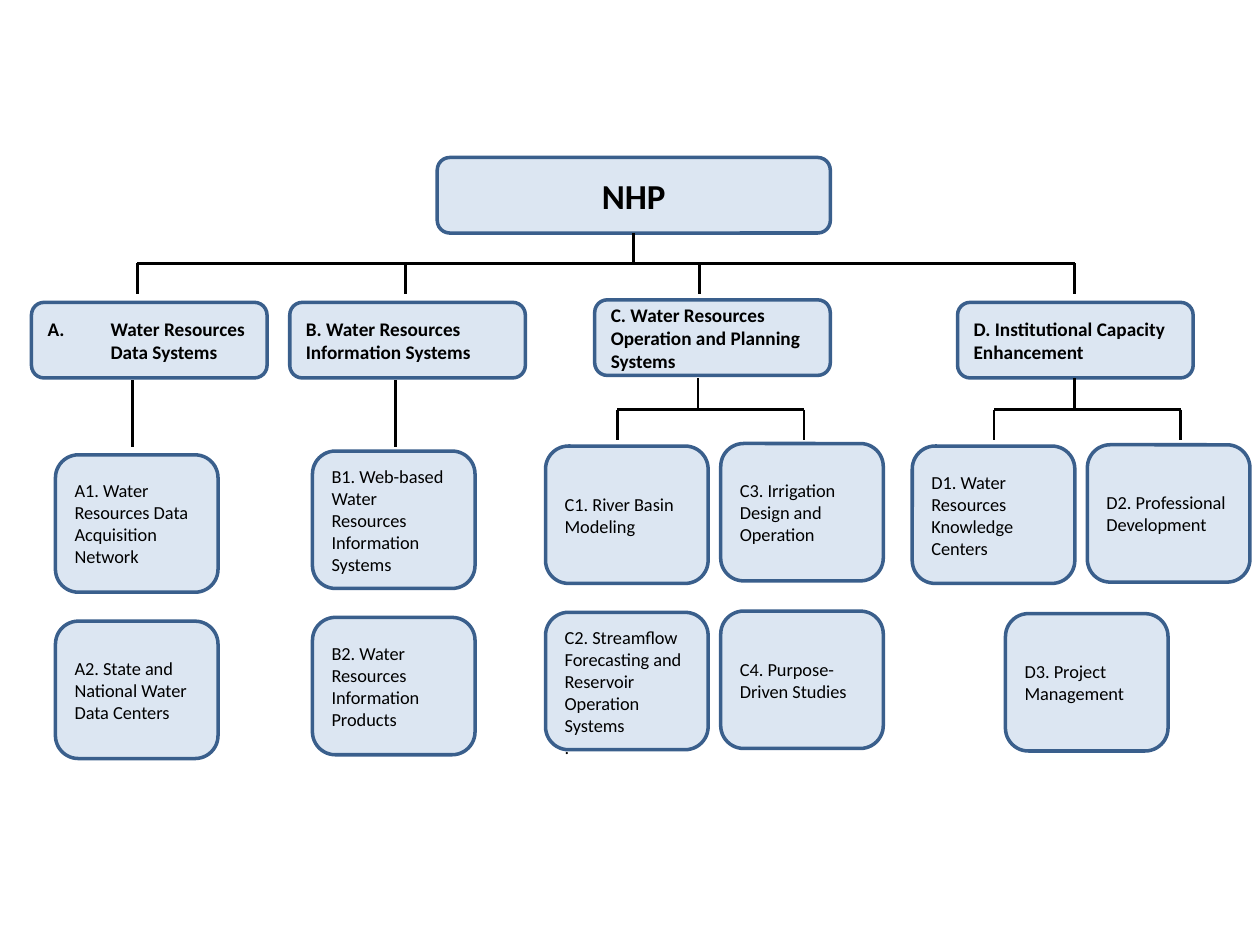
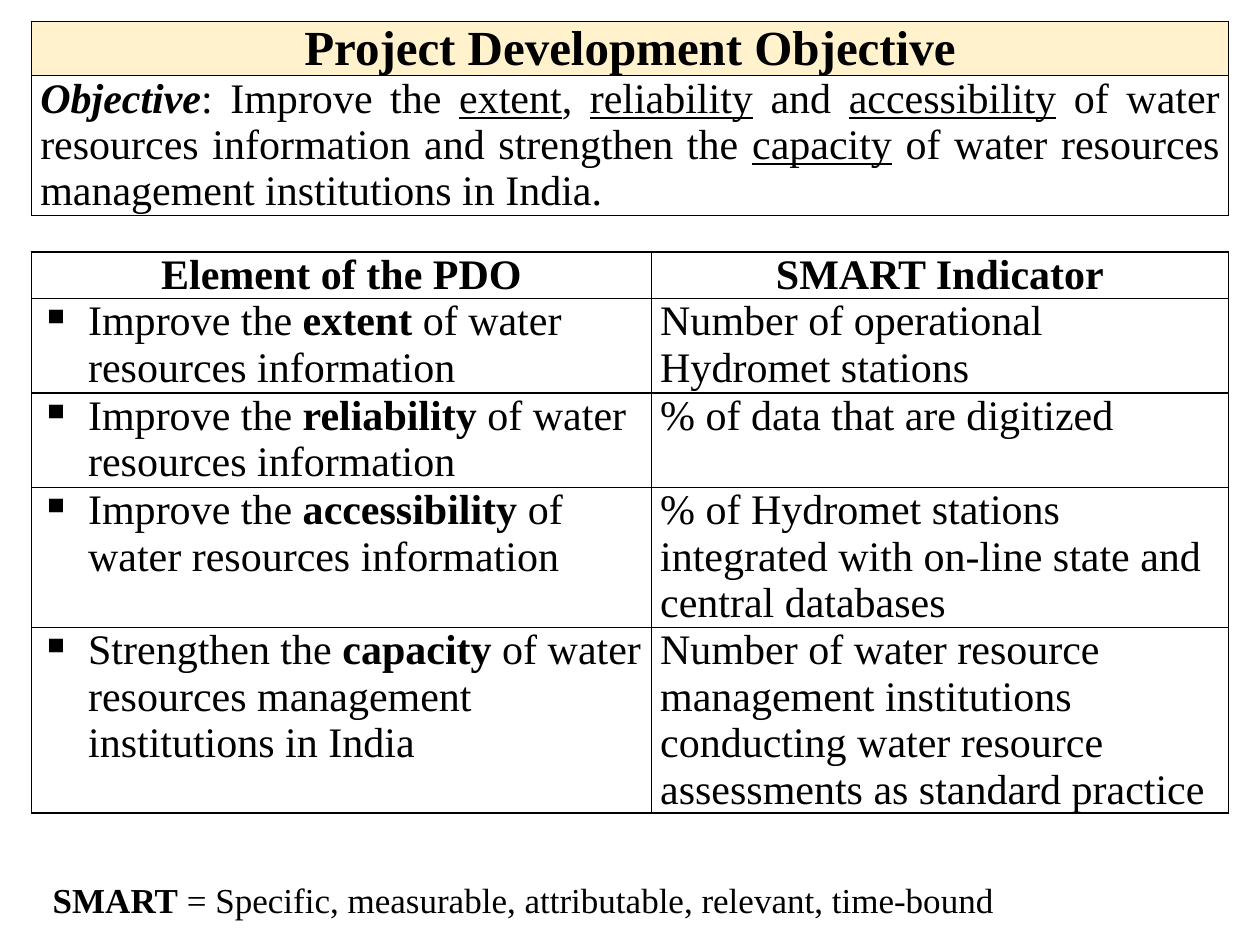
from lxml import etree
from pptx import Presentation
from pptx import util as u
from pptx.dml.color import RGBColor
from pptx.enum import shapes, text
from pptx.oxml import ns

COLORS = {"box": "DCE6F2", "edge": "3A5F8C", "ink": "000000", "band": "FFF2CC"}
SANS, SERIF = "Calibri", "Times New Roman"
AL = text.PP_ALIGN
STYLES = {"b": "bold", "i": "italic", "u": "underline"}

HEAD_W, BOX_H = 1.87, 0.6
LEAF_W, LEAF_H = 1.29, 1.09
TRUNK_Y, LINK = 2.09, 0.24

# Each branch: header left, top and text; offset of the stem; fork offsets;
# leaves as (x offset, y offset, paragraphs), all from the header's corner
BRANCHES = [
    (0.25, 2.4, "Water Resources Data Systems", 0.8, [], [
        (0.19, 1.21, ["A1. Water Resources Data Acquisition Network"]),
        (0.19, 2.53, ["A2. State and National Water Data Centers"])]),
    (2.3, 2.4, "B. Water Resources Information Systems", 0.84, [], [
        (0.18, 1.18, ["B1. Web-based Water Resources Information Systems"]),
        (0.18, 2.5, ["B2. Water Resources Information Products"])]),
    (4.72, 2.38, "C. Water Resources Operation and Planning Systems", 0.82, [0.18, 1.66], [
        (-0.39, 1.16, ["C1. River Basin Modeling"]),
        (-0.39, 2.48, ["C2. Streamflow Forecasting and Reservoir Operation Systems", "."]),
        (1.0, 1.14, ["C3. Irrigation Design and Operation"]),
        (1.0, 2.47, ["C4. Purpose-Driven Studies"])]),
    (7.6, 2.4, "D. Institutional Capacity Enhancement", 0.93, [0.29, 1.77], [
        (-0.36, 1.14, ["D1. Water Resources Knowledge Centers"]),
        (1.03, 1.13, ["D2. Professional Development"]),
        (0.38, 2.47, ["D3. Project Management"])]),
]
DROPS = [1.09, 3.22, 5.55, 8.53]

OBJECTIVE = [
    ("Objective", "bi"), (": Improve the ", ""), ("extent", "u"), (", ", ""),
    ("reliability", "u"), (" and ", ""), ("accessibility", "u"),
    (" of water resources information and strengthen the ", ""), ("capacity", "u"),
    (" of water resources management institutions in India.", "")]

# Verb, key word, rest of the element, indicator
INDICATORS = [
    ("Improve the ", "extent", " of water resources information",
     "Number of operational Hydromet stations"),
    ("Improve the ", "reliability", " of water resources information",
     "% of data that are digitized"),
    ("Improve the ", "accessibility", " of water resources information",
     "% of Hydromet stations integrated with on-line state and central databases"),
    ("Strengthen the ", "capacity", " of water resources management institutions in India",
     "Number of water resource management institutions conducting water resource "
     "assessments as standard practice"),
]


def rgb(name):
    return RGBColor.from_string(COLORS[name])


def set_all(obj, values):
    for name, value in values.items():
        setattr(obj, name, value)


def write(p, runs, font, size, align=AL.LEFT):
    """Fill a paragraph with (text, style letters) runs."""
    p.alignment = align
    for words, style in runs:
        r = p.add_run()
        r.text = words
        set_all(r.font, {"name": font, "size": u.Pt(size)})
        set_all(r.font, {name: key in style for key, name in STYLES.items()})
        r.font.color.rgb = rgb("ink")


def bullet(p, indent, tag, **attrs):
    pPr = p._p.get_or_add_pPr()
    pPr.set("marL", str(u.Inches(indent)))
    pPr.set("indent", str(-u.Inches(indent)))
    etree.SubElement(pPr, ns.qn(tag), attrs)


# Organisation chart
def box(s, x, y, w, h, paras, size, style="", align=AL.LEFT):
    sp = s.shapes.add_shape(shapes.MSO_SHAPE.ROUNDED_RECTANGLE,
                            *map(u.Inches, (x, y, w, h)))
    sp.shadow.inherit = False
    sp.fill.solid()
    sp.fill.fore_color.rgb = rgb("box")
    sp.line.color.rgb = rgb("edge")
    sp.line.width = u.Pt(2)
    tf = sp.text_frame
    set_all(tf, {"word_wrap": True, "vertical_anchor": text.MSO_ANCHOR.MIDDLE})
    for i, words in enumerate(paras):
        p = tf.add_paragraph() if i else tf.paragraphs[0]
        write(p, [(words, style)], SANS, size, align)
    return tf


def line(s, x1, y1, x2, y2):
    c = s.shapes.add_connector(shapes.MSO_CONNECTOR.STRAIGHT,
                               *map(u.Inches, (x1, y1, x2, y2)))
    c.line.color.rgb = rgb("ink")
    c.line.width = u.Pt(1.5)
    etree.SubElement(c._element.spPr, ns.qn("a:effectLst"))


def fork(s, x, top, bar_y, drops):
    """Stem down to a bar, and one drop from the bar to each child."""
    line(s, x, top, x, bar_y)
    line(s, drops[0], bar_y, drops[-1], bar_y)
    for drop in drops:
        line(s, drop, bar_y, drop, bar_y + LINK)


def branch(s, x, y, title, stem, tines, leaves):
    tf = box(s, x, y, HEAD_W, BOX_H, [title], 11, "b")
    for dx, dy, paras in leaves:
        leaf = box(s, x + dx, y + dy, LEAF_W, LEAF_H, paras, 10.5)
        if len(paras) > 1:
            leaf.margin_top = u.Inches(0.22)
    if tines:
        fork(s, x + stem, 3, 3.25, [x + t for t in tines])
    else:
        line(s, x + stem, 3.02, x + stem, 3.55)
    return tf


def org_slide(prs):
    s = prs.slides.add_slide(prs.slide_layouts[6])
    box(s, 3.47, 1.25, 3.12, BOX_H, ["NHP"], 20, "b", AL.CENTER)
    heads = [branch(s, *b) for b in BRANCHES]
    bullet(heads[0].paragraphs[0], 0.5, "a:buAutoNum", type="alphaUcPeriod")
    fork(s, 5.03, 1.85, TRUNK_Y, DROPS)


# Objective tables
def grid(s, x, y, cols, rows):
    """Empty bordered table with the given column widths and row heights."""
    frame = s.shapes.add_table(len(rows), len(cols), *map(
        u.Inches, (x, y, sum(cols), sum(rows))))
    t = frame.table
    set_all(t, {"first_row": False, "horz_banding": False})
    for col, w in zip(t.columns, cols):
        col.width = u.Inches(w)
    for row, h in zip(t.rows, rows):
        row.height = u.Inches(h)
    for cell in t.iter_cells():
        set_all(cell, {"margin_left": u.Inches(0.07), "margin_right": u.Inches(0.07),
                       "margin_top": 0, "margin_bottom": 0})
        tcPr = cell._tc.get_or_add_tcPr()
        for side in "LRTB":
            ln = etree.SubElement(tcPr, ns.qn("a:ln" + side), w=str(u.Pt(1)))
            fill = etree.SubElement(ln, ns.qn("a:solidFill"))
            etree.SubElement(fill, ns.qn("a:srgbClr"), val=COLORS["ink"])
        cell.fill.background()
    return t


def fill_cell(t, row, col, runs, size=24, align=AL.LEFT):
    p = t.cell(row, col).text_frame.paragraphs[0]
    write(p, runs, SERIF, size, align)
    return p


def objective_table(s, x, y):
    t = grid(s, x, y, [9.5], [0.43, 1.11])
    band = t.cell(0, 0).fill
    band.solid()
    band.fore_color.rgb = rgb("band")
    fill_cell(t, 0, 0, [("Project Development Objective", "b")], 28, AL.CENTER)
    fill_cell(t, 1, 0, OBJECTIVE, align=AL.JUSTIFY)


def indicator_table(s, x, y):
    t = grid(s, x, y, [4.92, 4.58], [0.37, 0.75, 0.75, 1.11, 1.47])
    for col, head in enumerate(["Element of the PDO", "SMART Indicator"]):
        fill_cell(t, 0, col, [(head, "b")], align=AL.CENTER)
    for row, (verb, key, rest, indicator) in enumerate(INDICATORS, 1):
        p = fill_cell(t, row, 0, [(verb, ""), (key, "b"), (rest, "")])
        bullet(p, 0.38, "a:buChar", char="▪")
        fill_cell(t, row, 1, [(indicator, "")])


def footnote(s, x, y, w, h):
    tf = s.shapes.add_textbox(*map(u.Inches, (x, y, w, h))).text_frame
    tf.word_wrap = True
    write(tf.paragraphs[0], [
        ("SMART", "b"),
        (" = Specific, measurable, attributable, relevant, time-bound", "")], SERIF, 20)


def objective_slide(prs):
    s = prs.slides.add_slide(prs.slide_layouts[6])
    objective_table(s, 0.25, 0.17)
    indicator_table(s, 0.25, 2)
    footnote(s, 0.32, 6.92, 8.6, 0.44)


def main():
    prs = Presentation()
    set_all(prs, {"slide_width": u.Inches(10), "slide_height": u.Inches(7.5)})
    org_slide(prs)
    objective_slide(prs)
    prs.save("out.pptx")


if __name__ == "__main__":
    main()
